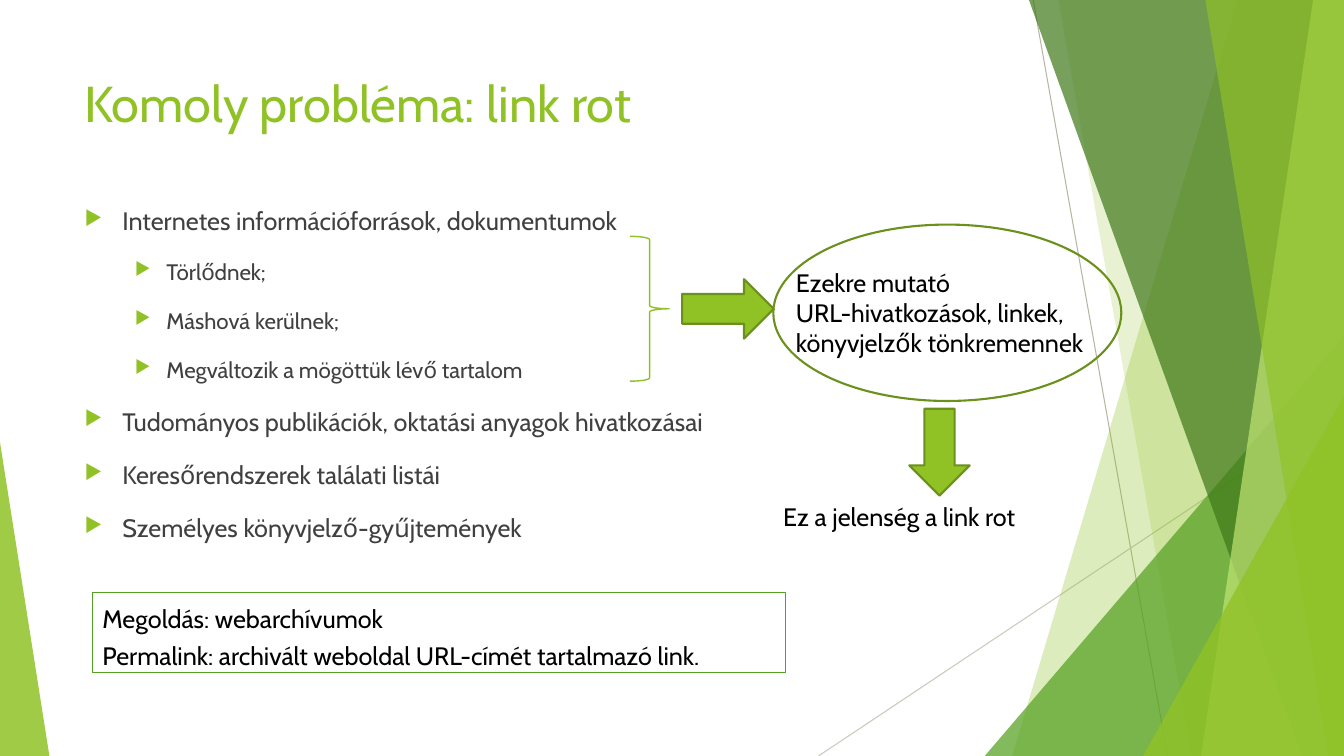
from lxml import etree
from pptx import Presentation
from pptx.dml.color import RGBColor
from pptx.enum.shapes import MSO_CONNECTOR, MSO_SHAPE
from pptx.enum.text import MSO_ANCHOR, PP_ALIGN
from pptx.oxml.ns import qn
from pptx.util import Pt

STRAIGHT = MSO_CONNECTOR.STRAIGHT
TRIANGLE = MSO_SHAPE.ISOSCELES_TRIANGLE
RIGHT_ARROW, DOWN_ARROW = MSO_SHAPE.RIGHT_ARROW, MSO_SHAPE.DOWN_ARROW
BRACE, ELLIPSE, RECT = MSO_SHAPE.RIGHT_BRACE, MSO_SHAPE.OVAL, MSO_SHAPE.RECTANGLE
TOP, LEFT = MSO_ANCHOR.TOP, PP_ALIGN.LEFT

FONT = "Cabin"
LIME, OLIVE, GREEN = "90C226", "6B901C", "54A021"
BLACK, GREY, WHITE = "000000", "404040", "FFFFFF"
WIDTH, HEIGHT = 960, 540

# level: (font size, left margin, hanging indent)
LEVELS = {0: (18, 27, 27), 1: (16, 58.5, 22.5)}
BULLETS = [
    (0, "Internetes információforrások, dokumentumok"),
    (1, "Törlődnek;"),
    (1, "Máshová kerülnek;"),
    (1, "Megváltozik a mögöttük lévő tartalom"),
    (0, "Tudományos publikációk, oktatási anyagok hivatkozásai"),
    (0, "Keresőrendszerek találati listái"),
    (0, "Személyes könyvjelző-gyűjtemények"),
]


def rgb(color):
    return RGBColor.from_string(color)


def paint(s, fill=None, line=None, width=1.0, opacity=100):
    """Set fill, outline and opacity (percent), and drop the shadow."""
    s.shadow.inherit = False
    if fill:
        s.fill.solid()
        s.fill.fore_color.rgb = rgb(fill)
        if opacity < 100:
            clr = s.fill._xPr.find(".//" + qn("a:srgbClr"))
            etree.SubElement(clr, qn("a:alpha"), val=str(opacity * 1000))
    else:
        s.fill.background()
    if line:
        s.line.color.rgb = rgb(line)
        s.line.width = Pt(width)
    else:
        s.line.fill.background()


def add_shape(slide, kind, box, adjust=None, **style):
    s = slide.shapes.add_shape(kind, *map(Pt, box))
    if adjust is not None:
        s.adjustments[0] = adjust
    paint(s, **style)
    return s


def add_band(slide, top_x, bottom_x, fill, opacity):
    """Fill from a slanted left edge to the right edge of the slide."""
    builder = slide.shapes.build_freeform(top_x, 0, scale=Pt(1))
    builder.add_line_segments([(WIDTH, 0), (WIDTH, HEIGHT), (bottom_x, HEIGHT)])
    paint(builder.convert_to_shape(), fill, opacity=opacity)


def add_line(slide, x1, y1, x2, y2, color):
    c = slide.shapes.add_connector(STRAIGHT, Pt(x1), Pt(y1), Pt(x2), Pt(y2))
    c.line.color.rgb = rgb(color)
    c.line.width = Pt(0.75)
    etree.SubElement(c._element.spPr, qn("a:effectLst"))


def format_paragraph(p, size, color, spacing=None):
    p.alignment = LEFT
    if spacing:
        p.line_spacing = spacing
    for r in p.runs:
        r.font.name = FONT
        r.font.size = Pt(size)
        r.font.color.rgb = rgb(color)


def write(s, text, size=18, color=BLACK, spacing=None):
    tf = s.text_frame
    tf.word_wrap = True
    tf.vertical_anchor = TOP
    tf.text = text
    for p in tf.paragraphs:
        format_paragraph(p, size, color, spacing)


def add_text(slide, box, text, **style):
    write(slide.shapes.add_textbox(*map(Pt, box)), text, **style)


def add_bullet(p, margin, indent):
    pPr = p._p.get_or_add_pPr()
    pPr.set("marL", str(Pt(margin)))
    pPr.set("indent", str(-Pt(indent)))
    clr = etree.SubElement(pPr, qn("a:buClr"))
    etree.SubElement(clr, qn("a:srgbClr"), val=LIME)
    etree.SubElement(pPr, qn("a:buSzPct"), val="80000")
    etree.SubElement(pPr, qn("a:buChar"), char="▶")


def add_bullet_list(slide, box, items):
    s = slide.shapes.add_textbox(*map(Pt, box))
    write(s, "\n".join(text for _, text in items))
    for p, (level, _) in zip(s.text_frame.paragraphs, items):
        size, margin, indent = LEVELS[level]
        p.level = level
        p.space_before = Pt(10)
        format_paragraph(p, size, GREY, spacing=1.3)
        add_bullet(p, margin, indent)


def add_backdrop(slide):
    add_line(slide, 738, 0, 834, HEIGHT, "B7B4A1")
    add_line(slide, WIDTH, 290, 584.6, HEIGHT, "CBC9BB")
    add_band(slide, 884.2, 723, LIME, 30)
    add_band(slide, 756, 851, LIME, 20)
    add_shape(slide, TRIANGLE, (703.4, 240, 256.6, 300), 1, fill=GREEN, opacity=72)
    add_band(slide, 735, 929.5, "3F7819", 70)
    add_band(slide, 938.2, 858.2, "C0E474", 70)
    add_band(slide, 861, 949, LIME, 65)
    add_shape(slide, TRIANGLE, (816.5, 283, 143.5, 257), 1, fill=LIME, opacity=80)
    add_shape(slide, TRIANGLE, (0, 316, 35.3, 224), 0, fill=LIME, opacity=85)


def main():
    prs = Presentation()
    prs.slide_width, prs.slide_height = Pt(WIDTH), Pt(HEIGHT)
    slide = prs.slides.add_slide(prs.slide_layouts[6])
    slide.background.fill.solid()
    slide.background.fill.fore_color.rgb = rgb(WHITE)

    add_backdrop(slide)
    add_text(slide, (53.3, 48, 677, 104), "Komoly probléma: link rot",
             size=36, color=LIME)
    add_bullet_list(slide, (53.3, 137, 677, 305), BULLETS)

    add_text(slide, (561.5, 187.2, 240, 94),
             "Ezekre mutató \vURL-hivatkozások, linkek, könyvjelzők tönkremennek")
    arrow = {"fill": LIME, "line": OLIVE, "width": 1.5}
    add_shape(slide, RIGHT_ARROW, (487.2, 199.4, 65.5, 42.5), **arrow)
    add_shape(slide, BRACE, (450, 168.8, 28, 103.5), line=LIME)
    add_shape(slide, ELLIPSE, (552.4, 160.4, 248.6, 126), line=OLIVE, width=1.5)
    add_shape(slide, DOWN_ARROW, (649.5, 292, 43.2, 62), **arrow)
    add_text(slide, (552.4, 354.4, 208, 29), "Ez a jelenség a link rot")

    solution = add_shape(slide, RECT, (66, 423.3, 495.4, 57.4),
                         line=GREEN, width=0.75)
    write(solution, "Megoldás: webarchívumok\n"
          "Permalink: archivált weboldal URL-címét tartalmazó link.", spacing=1.2)

    prs.save("out.pptx")


if __name__ == "__main__":
    main()
